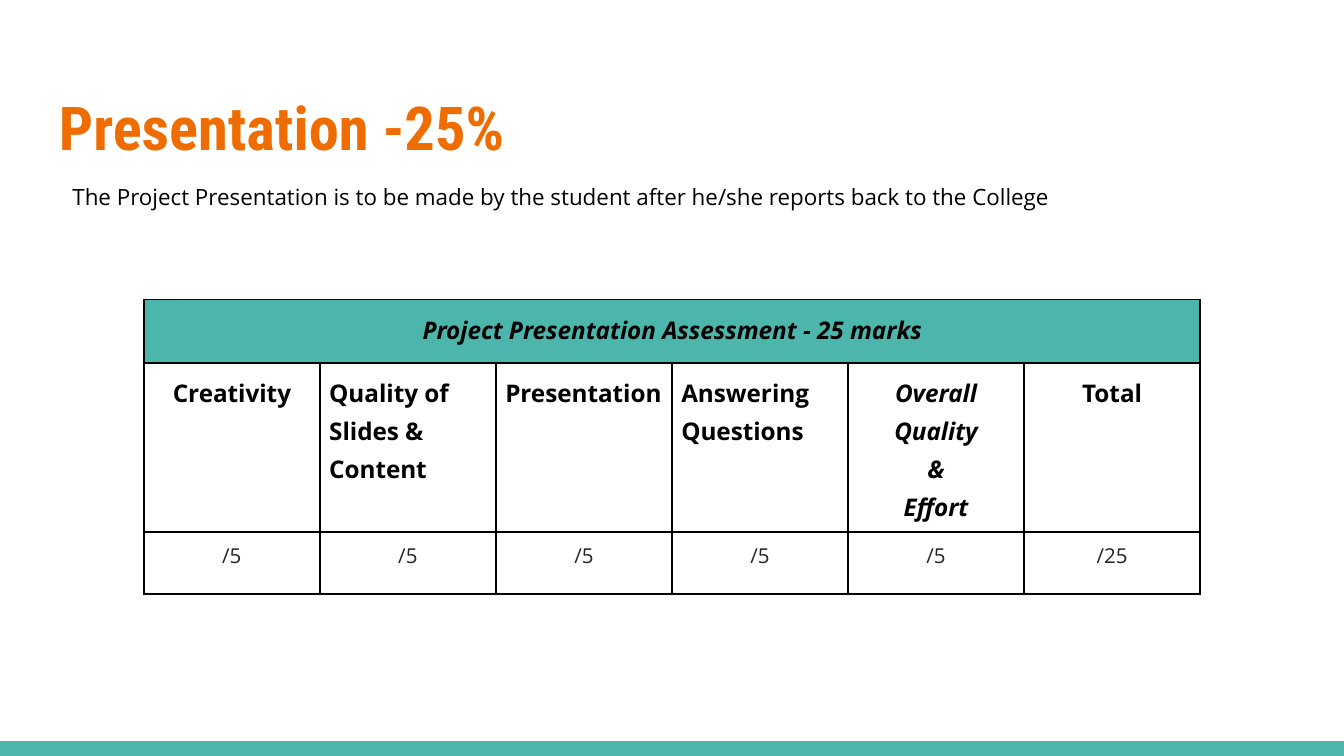
from lxml import etree
from pptx import Presentation
from pptx.dml.color import RGBColor
from pptx.enum.shapes import MSO_SHAPE
from pptx.enum.text import PP_ALIGN
from pptx.oxml.ns import qn
from pptx.util import Inches, Pt

RECTANGLE = MSO_SHAPE.RECTANGLE
LEFT, CENTER = PP_ALIGN.LEFT, PP_ALIGN.CENTER
COLORS = {"teal": "4DB6AC", "orange": "EF6C00", "black": "000000", "gray": "212529"}
BODY_FONT, TITLE_FONT = "Open Sans", "Roboto Condensed"
COLUMN_WIDTH = Inches(1.31)
ROW_HEIGHTS = [0.47, 1.26, 0.46]


def write_text(frame, text, size, color="black", font=BODY_FONT, bold=False,
               italic=False, align=LEFT, spacing=1.15):
    """Fill a text frame, one paragraph per line, in one style."""
    frame.word_wrap = True
    frame.text = text
    for paragraph in frame.paragraphs:
        paragraph.alignment = align
        paragraph.line_spacing = spacing
        for run in paragraph.runs:
            run.font.size = Pt(size)
            run.font.name = font
            run.font.bold = bold
            run.font.italic = italic
            run.font.color.rgb = RGBColor.from_string(COLORS[color])


def add_borders(cell):
    properties = cell._tc.get_or_add_tcPr()
    for index, side in enumerate(("a:lnL", "a:lnR", "a:lnT", "a:lnB")):
        line = etree.Element(qn(side), w=str(Pt(1)))
        fill = etree.SubElement(line, qn("a:solidFill"))
        etree.SubElement(fill, qn("a:srgbClr"), val=COLORS["black"])
        properties.insert(index, line)


presentation = Presentation()
presentation.slide_width = Inches(10)
presentation.slide_height = presentation.slide_width * 9 // 16
slide = presentation.slides.add_slide(presentation.slide_layouts[6])

# Footer band
band_height = Inches(0.11)
band = slide.shapes.add_shape(RECTANGLE, 0, presentation.slide_height - band_height,
                              presentation.slide_width, band_height)
band.shadow.inherit = False
band.fill.solid()
band.fill.fore_color.rgb = RGBColor.from_string(COLORS["teal"])
band.line.fill.background()

# Title and introduction
title = slide.shapes.add_textbox(Inches(0.34), Inches(0.49), Inches(9.32), Inches(0.77))
introduction = slide.shapes.add_textbox(Inches(0.44), Inches(1.23), Inches(9.32), Inches(0.4))
for box in (title, introduction):
    box.text_frame.margin_top = box.text_frame.margin_bottom = Inches(0.1)
write_text(title.text_frame, "Presentation -25%", 32.4, "orange", TITLE_FONT, bold=True)
write_text(introduction.text_frame,
           "The Project Presentation is to be made by the student "
           "after he/she reports back to the College", 12)

# Assessment table: criterion, alignment, italic, marks
criteria = [
    ("Creativity", CENTER, False, "/5"),
    ("Quality of Slides & Content", LEFT, False, "/5"),
    ("Presentation", LEFT, False, "/5"),
    ("Answering\nQuestions", LEFT, False, "/5"),
    ("Overall\nQuality\n&\nEffort", CENTER, True, "/5"),
    ("Total", CENTER, False, "/25"),
]
table = slide.shapes.add_table(len(ROW_HEIGHTS), len(criteria), Inches(1.07), Inches(2.23),
                               COLUMN_WIDTH * len(criteria), Inches(sum(ROW_HEIGHTS))).table
table.first_row = table.horz_banding = False
for column in table.columns:
    column.width = COLUMN_WIDTH
for row, height in zip(table.rows, ROW_HEIGHTS):
    row.height = Inches(height)
    for cell in row.cells:
        cell.margin_left = cell.margin_right = Inches(0.07)
        cell.margin_top = cell.margin_bottom = Inches(0.07)
        cell.fill.background()
        add_borders(cell)

header = table.cell(0, 0)
header.merge(table.cell(0, len(criteria) - 1))
header.fill.solid()
header.fill.fore_color.rgb = RGBColor.from_string(COLORS["teal"])
write_text(header.text_frame, "Project Presentation Assessment - 25 marks", 13,
           bold=True, italic=True, align=CENTER)

for column_index, (criterion, align, italic, marks) in enumerate(criteria):
    write_text(table.cell(1, column_index).text_frame, criterion, 13,
               bold=True, italic=italic, align=align)
    write_text(table.cell(2, column_index).text_frame, marks, 11, "gray",
               align=CENTER, spacing=1.0)

presentation.save("out.pptx")
